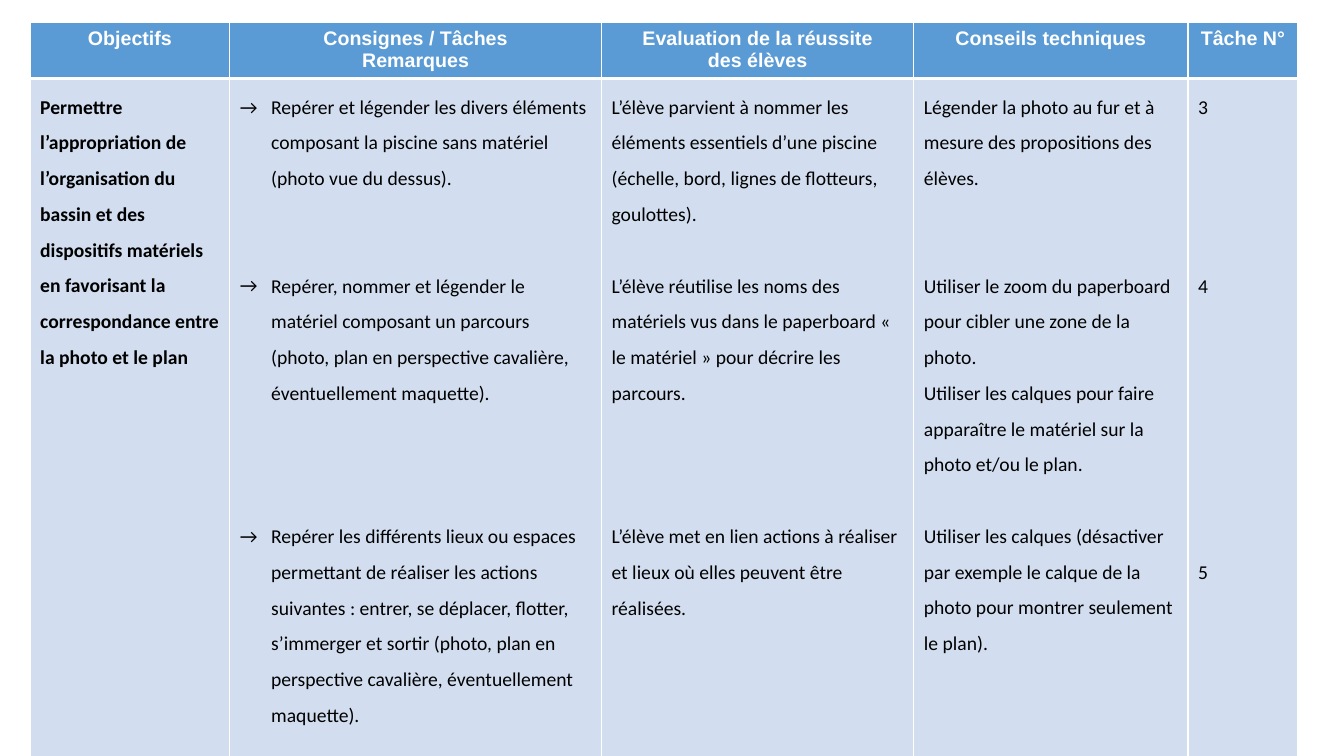
from lxml.etree import SubElement
from pptx import Presentation
from pptx.dml.color import RGBColor
from pptx.enum.text import PP_ALIGN as Align
from pptx.oxml.ns import qn
from pptx.util import Cm, Pt

WHITE = RGBColor(0xFF, 0xFF, 0xFF)
BLACK = RGBColor(0, 0, 0)
HEADER_BLUE = RGBColor(0x5B, 0x9B, 0xD5)
BODY_BLUE = RGBColor(0xD2, 0xDE, 0xEF)

HEADINGS = [
    ["Objectifs"],
    ["Consignes / Tâches", "Remarques"],
    ["Evaluation de la réussite", "des élèves"],
    ["Conseils techniques"],
    ["Tâche N°"],
]

OBJECTIVE = [
    (0, "Permettre l’appropriation de l’organisation du bassin et des dispositifs matériels "
        "en favorisant la correspondance entre la photo et le plan"),
]
INSTRUCTIONS = [
    (0, "Repérer et légender les divers éléments composant la piscine sans matériel "
        "(photo vue du dessus)."),
    (2, "Repérer, nommer et légender le matériel composant un parcours "
        "(photo, plan en perspective cavalière, éventuellement maquette)."),
    (3, "Repérer les différents lieux ou espaces permettant de réaliser les actions suivantes : "
        "entrer, se déplacer, flotter, s’immerger et sortir "
        "(photo, plan en perspective cavalière, éventuellement maquette)."),
]
EVALUATION = [
    (0, "L’élève parvient à nommer les éléments essentiels d’une piscine "
        "(échelle, bord, lignes de flotteurs, goulottes)."),
    (1, "L’élève réutilise les noms des matériels vus dans le paperboard "
        "« le matériel » pour décrire les parcours."),
    (3, "L’élève met en lien actions à réaliser et lieux où elles peuvent être réalisées."),
]
ADVICE = [
    (0, "Légender la photo au fur et à mesure des propositions des élèves."),
    (2, "Utiliser le zoom du paperboard pour cibler une zone de la photo."),
    (0, "Utiliser les calques pour faire apparaître le matériel sur la photo et/ou le plan."),
    (1, "Utiliser les calques (désactiver par exemple le calque de la photo "
        "pour montrer seulement le plan)."),
]
TASK_NUMBERS = [(0, "3"), (4, "4"), (7, "5")]
BODY = [OBJECTIVE, INSTRUCTIONS, EVALUATION, ADVICE, TASK_NUMBERS]

COLUMN_WIDTHS = [5.03, 9.37, 7.87, 6.91, 2.77]
ROW_HEIGHTS = [1.42, 17.17]
LEFT, TOP = 0.76, 0.56
LINE_PITCH = 25.6
BULLET_INDENT = Cm(0.79)

HEADING_FONT = {"name": "Arial", "size": Pt(14), "bold": True}
OBJECTIVE_FONT = {"name": "Calibri", "size": Pt(14), "bold": True}
BODY_FONT = {**OBJECTIVE_FONT, "bold": False}
HEADING_PARAGRAPH = {"alignment": Align.CENTER}
BODY_PARAGRAPH = {"alignment": Align.LEFT, "line_spacing": 1.5}
HEADING_BORDERS = {"lnL": 1, "lnR": 1, "lnT": 1, "lnB": 3}
BODY_BORDERS = {"lnL": 1, "lnR": 1, "lnT": 3, "lnB": 1}


def apply(target, values):
    for attribute, value in values.items():
        setattr(target, attribute, value)


def add_arrow_bullet(paragraph):
    properties = paragraph._p.get_or_add_pPr()
    properties.set("marL", str(BULLET_INDENT))
    properties.set("indent", str(-BULLET_INDENT))
    SubElement(properties, qn("a:buFont")).set("typeface", "Calibri")
    SubElement(properties, qn("a:buChar")).set("char", "→")


def paint(cell, color, borders):
    properties = cell._tc.get_or_add_tcPr()
    for side, width in borders.items():
        line = SubElement(properties, qn(f"a:{side}"))
        line.set("w", str(Pt(width)))
        fill = SubElement(line, qn("a:solidFill"))
        SubElement(fill, qn("a:srgbClr")).set("val", str(WHITE))
    cell.fill.solid()
    cell.fill.fore_color.rgb = color


def write(cell, entries, font, color, layout, bulleted=False):
    frame = cell.text_frame
    for position, (blank_lines, text) in enumerate(entries):
        paragraph = frame.add_paragraph() if position else frame.paragraphs[0]
        apply(paragraph, layout)
        paragraph.space_before = Pt(round(blank_lines * LINE_PITCH, 1))
        if bulleted:
            add_arrow_bullet(paragraph)
        run = paragraph.add_run()
        run.text = text
        apply(run.font, font)
        run.font.color.rgb = color


deck = Presentation()
apply(deck, {"slide_width": Cm(33.87), "slide_height": Cm(19.05)})
slide = deck.slides.add_slide(deck.slide_layouts[6])
lesson_plan = slide.shapes.add_table(
    len(ROW_HEIGHTS), len(COLUMN_WIDTHS), Cm(LEFT), Cm(TOP),
    Cm(sum(COLUMN_WIDTHS)), Cm(sum(ROW_HEIGHTS)),
).table
for row, height in zip(lesson_plan.rows, ROW_HEIGHTS):
    row.height = Cm(height)

for index, (width, heading, entries) in enumerate(zip(COLUMN_WIDTHS, HEADINGS, BODY)):
    lesson_plan.columns[index].width = Cm(width)
    heading_cell, body_cell = (lesson_plan.cell(row, index) for row in range(2))
    paint(heading_cell, HEADER_BLUE, HEADING_BORDERS)
    paint(body_cell, BODY_BLUE, BODY_BORDERS)
    write(heading_cell, [(0, line) for line in heading], HEADING_FONT, WHITE, HEADING_PARAGRAPH)
    body_font = OBJECTIVE_FONT if entries is OBJECTIVE else BODY_FONT
    write(body_cell, entries, body_font, BLACK, BODY_PARAGRAPH, entries is INSTRUCTIONS)

deck.save("out.pptx")
